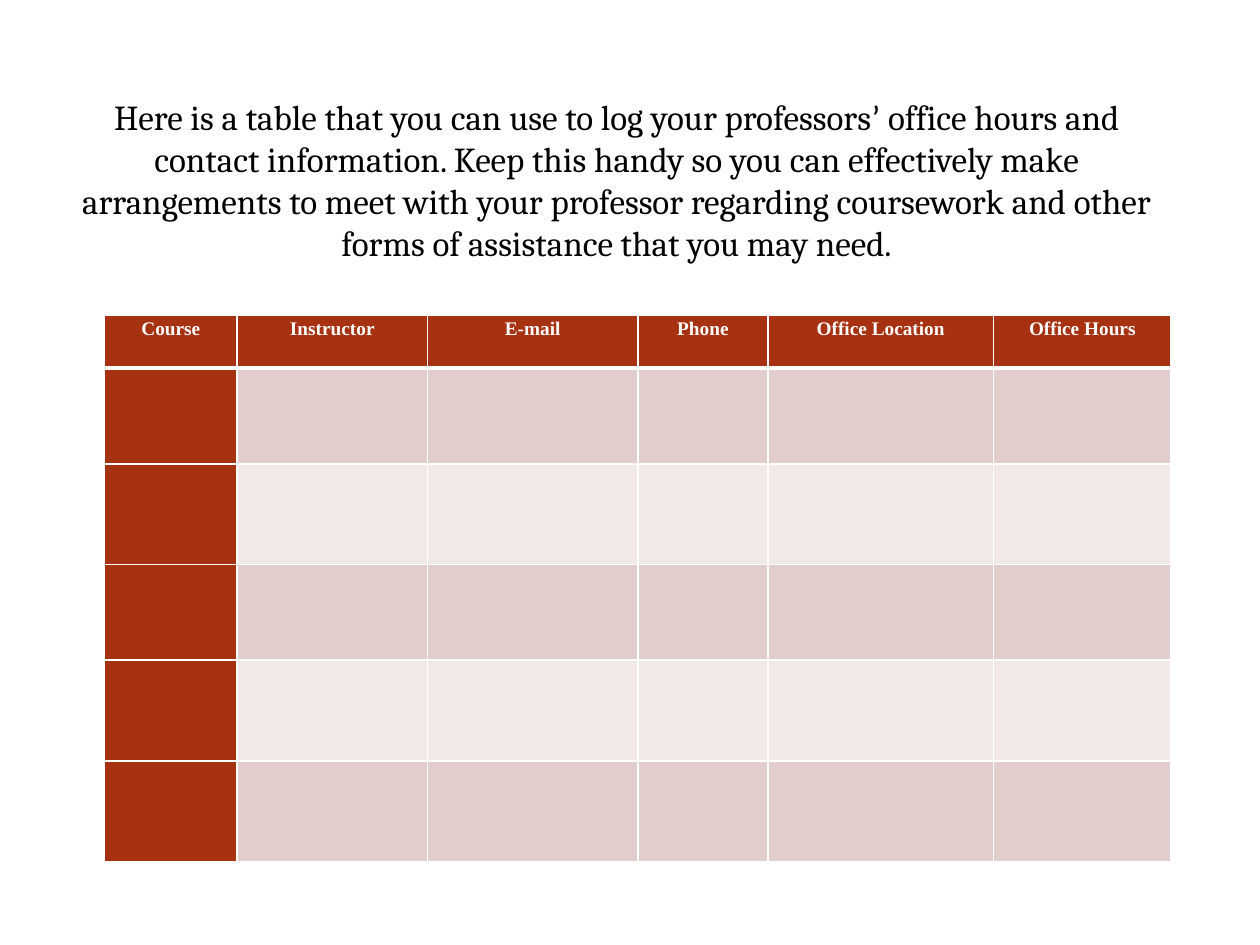
from lxml import etree
from pptx import Presentation
from pptx.dml.color import RGBColor
from pptx.enum.text import MSO_ANCHOR, PP_ALIGN
from pptx.oxml.ns import qn
from pptx.util import Cm, Pt

CENTER = PP_ALIGN.CENTER
MIDDLE = MSO_ANCHOR.MIDDLE

BLACK = RGBColor(0x00, 0x00, 0x00)
WHITE = RGBColor(0xFF, 0xFF, 0xFF)
RUST = RGBColor(0xA6, 0x32, 0x12)
BANDS = (RGBColor(0xE1, 0xCE, 0xCC), RGBColor(0xF1, 0xE8, 0xE7))

INTRO = (
    ("Here is a table that you can use to log your professors", "Cambria"),
    ("’", "Calibri"),
    (" office hours and contact information. Keep this handy so you can "
     "effectively make arrangements to meet with your professor regarding "
     "coursework and other forms of assistance that you may need.", "Cambria"),
)
COLUMNS = (
    ("Course", 2.67),
    ("Instructor", 3.84),
    ("E-mail", 4.24),
    ("Phone", 2.62),
    ("Office Location", 4.55),
    ("Office Hours", 3.58),
)
ROW_HEIGHTS = (1.07, 1.93, 2.03, 1.93, 2.03, 2.03)


def add_intro(slide):
    box = slide.shapes.add_textbox(Cm(1.27), Cm(2.54), Cm(22.33), Cm(4.01))
    frame = box.text_frame
    frame.word_wrap = True
    frame.vertical_anchor = MIDDLE
    paragraph = frame.paragraphs[0]
    paragraph.alignment = CENTER
    for text, typeface in INTRO:
        run = paragraph.add_run()
        run.text = text
        run.font.name = typeface
        run.font.size = Pt(20)
        run.font.color.rgb = BLACK
    # The closing line break keeps a tall last line that lifts the text
    paragraph.add_line_break()
    etree.SubElement(paragraph._p, qn("a:endParaRPr"), sz="4400")


def set_borders(cell, bottom):
    properties = cell._tc.get_or_add_tcPr()
    for side, width in (("L", 1), ("R", 1), ("T", 1), ("B", bottom)):
        line = etree.SubElement(properties, qn(f"a:ln{side}"), w=str(Pt(width)))
        fill = etree.SubElement(line, qn("a:solidFill"))
        etree.SubElement(fill, qn("a:srgbClr"), val=str(WHITE))


def style_cell(cell, color, bottom=1):
    set_borders(cell, bottom)
    cell.fill.solid()
    cell.fill.fore_color.rgb = color


def write_heading(cell, text):
    cell.margin_left = cell.margin_right = Cm(0.18)
    cell.margin_top = cell.margin_bottom = 0
    paragraph = cell.text_frame.paragraphs[0]
    paragraph.text = text
    paragraph.alignment = CENTER
    paragraph.line_spacing = 1.15
    font = paragraph.font
    font.name = "Times New Roman"
    font.size = Pt(11)
    font.bold = True
    font.color.rgb = WHITE


def add_contact_log(slide):
    width = sum(column_width for _, column_width in COLUMNS)
    log = slide.shapes.add_table(
        len(ROW_HEIGHTS), len(COLUMNS),
        Cm(2.11), Cm(6.35), Cm(width), Cm(sum(ROW_HEIGHTS))).table
    log.first_col = True
    for row, height in zip(log.rows, ROW_HEIGHTS):
        row.height = Cm(height)

    for c, (heading, column_width) in enumerate(COLUMNS):
        log.columns[c].width = Cm(column_width)
        # Heading row
        write_heading(log.cell(0, c), heading)
        style_cell(log.cell(0, c), RUST, bottom=3)
        # Rows to fill in: solid first column, banded others
        for r in range(1, len(ROW_HEIGHTS)):
            style_cell(log.cell(r, c), RUST if c == 0 else BANDS[(r - 1) % 2])


def main():
    presentation = Presentation()
    presentation.slide_width = Cm(25.4)
    presentation.slide_height = Cm(19.05)
    slide = presentation.slides.add_slide(presentation.slide_layouts[6])
    add_intro(slide)
    add_contact_log(slide)
    presentation.save("out.pptx")


if __name__ == "__main__":
    main()
